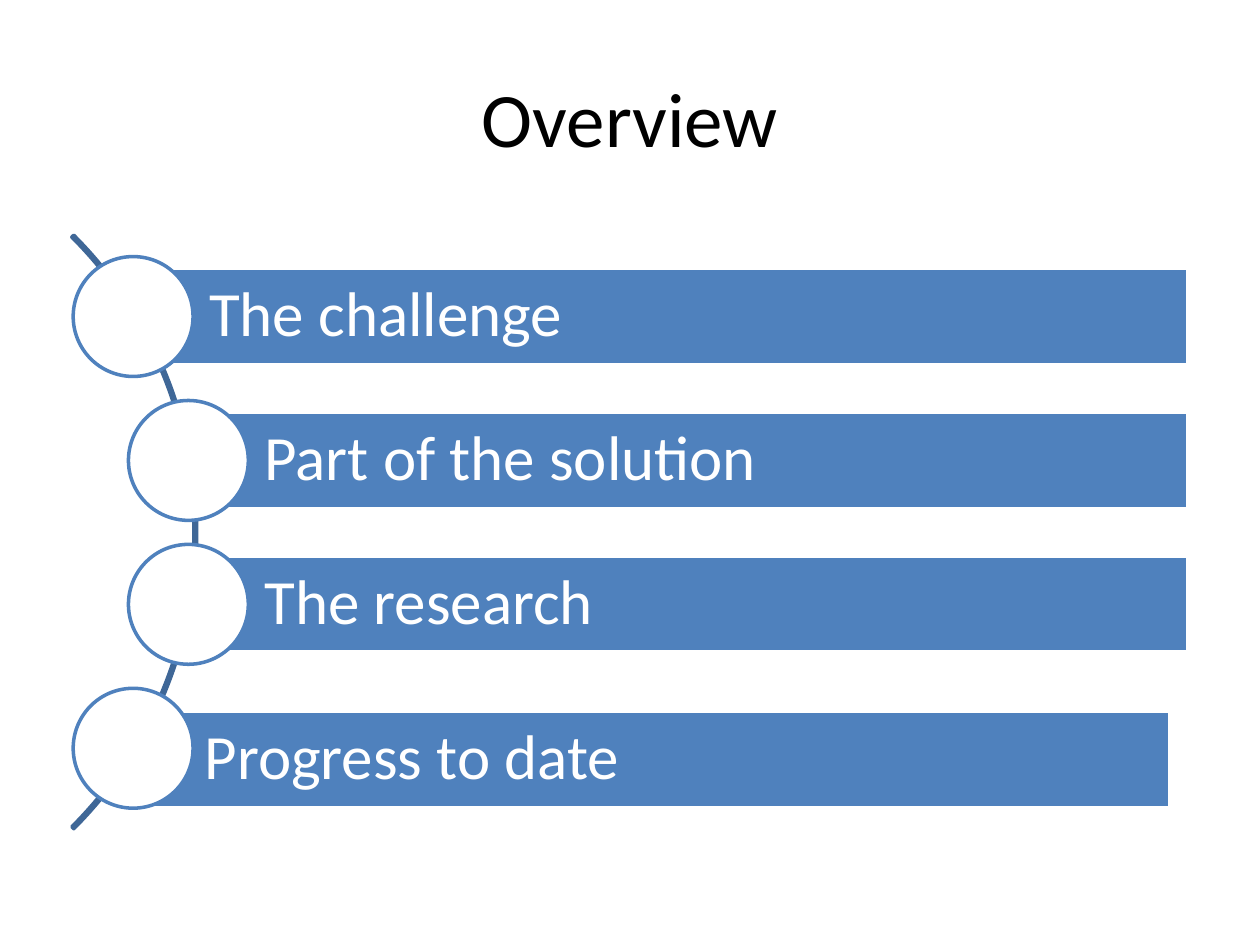
from pptx import Presentation
from pptx.dml.color import RGBColor
from pptx.enum import shapes, text
from pptx.oxml.ns import qn
from pptx.util import Pt

BLUE = RGBColor(0x4F, 0x81, 0xBD)
DARK_BLUE = RGBColor(0x3F, 0x67, 0x97)
WHITE = RGBColor(0xFF, 0xFF, 0xFF)
BLACK = RGBColor(0x00, 0x00, 0x00)
FONT = "Calibri"

TOPICS = [
    ("The challenge", 0, 0, 0),
    ("Part of the solution", 31.6, 0, 0),
    ("The research", 31.6, 0, 0),
    (" Progress to date", 0, -10.8, 6.4),
]


def add_run(p, content, size, color):
    r = p.add_run()
    r.text = content
    r.font.name = FONT
    r.font.size = Pt(size)
    r.font.color.rgb = color


def add_shape(s, kind, x, y, w, h, fill, line):
    sp = s.shapes.add_shape(kind, Pt(x), Pt(y), Pt(w), Pt(h))
    sp.shadow.inherit = False
    if fill is None:
        sp.fill.background()
    else:
        sp.fill.solid()
        sp.fill.fore_color.rgb = fill
    sp.line.color.rgb = line
    sp.line.width = Pt(2)
    return sp


def add_title(s, x, y, w, h):
    sp = s.shapes.title
    sp.left, sp.top, sp.width, sp.height = Pt(x), Pt(y), Pt(w), Pt(h)
    tf = sp.text_frame
    tf.vertical_anchor = text.MSO_ANCHOR.MIDDLE
    p = tf.paragraphs[0]
    p.alignment = text.PP_ALIGN.CENTER
    add_run(p, "Overview", 44, BLACK)


def add_arc(s, x, y, size):
    sp = add_shape(s, shapes.MSO_SHAPE.BLOCK_ARC, x, y, size, size, None, DARK_BLUE)
    for i, value in enumerate((189, 27, 0.0032)):
        sp.adjustments[i] = value


def add_bar(s, x, y, w, h, label):
    sp = add_shape(s, shapes.MSO_SHAPE.RECTANGLE, x, y, w, h, BLUE, WHITE)
    tf = sp.text_frame
    tf.word_wrap = True
    tf.vertical_anchor = text.MSO_ANCHOR.MIDDLE
    tf.margin_left = Pt(43.5)
    tf.margin_top = tf.margin_right = tf.margin_bottom = Pt(7.2)
    p = tf.paragraphs[0]
    p.alignment = text.PP_ALIGN.LEFT
    p.line_spacing = 0.9
    add_run(p, label, 36, WHITE)


def add_topics(s, x, y, w, h, bar_h=54.8, circle=68.5):
    pitch = (h - circle) / (len(TOPICS) - 1)
    for i, (label, indent, dx, dy) in enumerate(TOPICS):
        cx = x + circle / 2 + indent
        cy = y + circle / 2 + i * pitch
        add_bar(s, cx + dx, cy - bar_h / 2 + dy, x + w - cx, bar_h, label)
        add_shape(s, shapes.MSO_SHAPE.OVAL, cx - circle / 2, cy - circle / 2,
                  circle, circle, WHITE, BLUE)


def main():
    prs = Presentation()
    prs.slide_width, prs.slide_height = Pt(720), Pt(540)
    s = prs.slides.add_slide(prs.slide_layouts[5])
    add_title(s, 36, 21.6, 648, 90)
    add_arc(s, -367.2, 64.2, 479.6)
    add_topics(s, 41.8, 146.6, 637.2, 315.2)
    prs.save("out.pptx")


if __name__ == "__main__":
    main()
